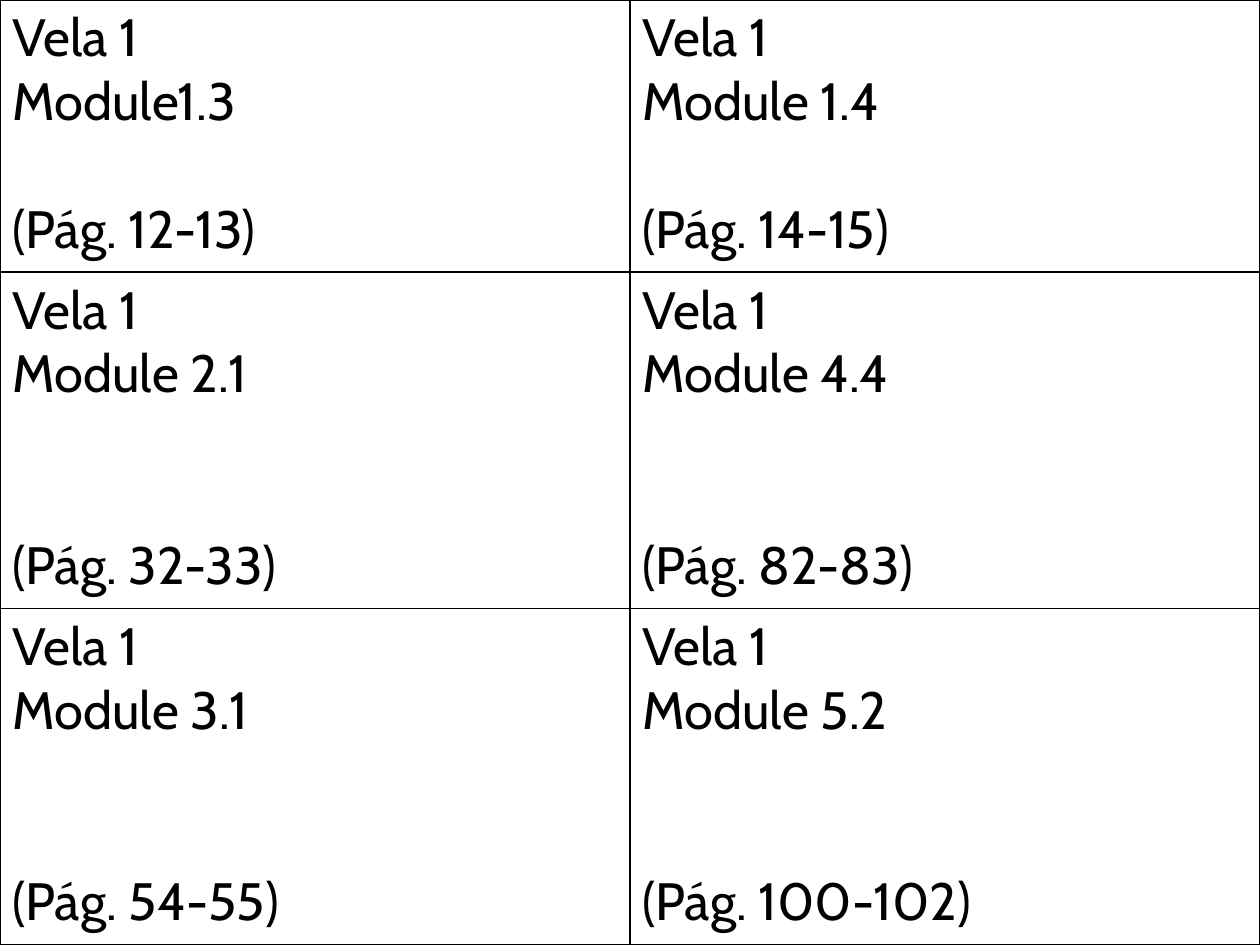
from lxml import etree
from pptx import Presentation
from pptx import util as u
from pptx.dml import color
from pptx.oxml import ns

LINE_PITCH = 36.5
FONT = {"name": "Cabin", "size": u.Pt(30), "bold": False}
ROWS = [
    (2.16, 1, [("Module1.3", "12-13"), ("Module 1.4", "14-15")]),
    (2.67, 2, [("Module 2.1", "32-33"), ("Module 4.4", "82-83")]),
    (2.67, 2, [("Module 3.1", "54-55"), ("Module 5.2", "100-102")]),
]


def rgb(hex_value):
    return color.RGBColor.from_string(hex_value)


def add_borders(cell, hex_value, width):
    properties = cell._tc.get_or_add_tcPr()
    for position, side in enumerate(("lnL", "lnR", "lnT", "lnB")):
        border = etree.Element(ns.qn(f"a:{side}"), w=str(u.Pt(width)))
        fill = etree.SubElement(border, ns.qn("a:solidFill"))
        etree.SubElement(fill, ns.qn("a:srgbClr"), val=hex_value)
        properties.insert(position, border)


def fill_card(cell, module, pages, blank_lines):
    cell.fill.solid()
    cell.fill.fore_color.rgb = rgb("FFFFFF")
    add_borders(cell, "000000", 1)
    cell.text = f"Vela 1\n{module}\n(Pág. {pages})"
    paragraphs = cell.text_frame.paragraphs
    for paragraph in paragraphs:
        font = paragraph.runs[0].font
        for attribute, value in FONT.items():
            setattr(font, attribute, value)
        font.color.rgb = rgb("000000")
    paragraphs[-1].space_before = u.Pt(blank_lines * LINE_PITCH)


def add_module_cards(slide, left, top, width, height):
    cards = slide.shapes.add_table(len(ROWS), 2, left, top, width, height).table
    cards.first_row = cards.horz_banding = False
    for row, (row_height, blank_lines, modules) in enumerate(ROWS):
        cards.rows[row].height = u.Inches(row_height)
        for column, (module, pages) in enumerate(modules):
            fill_card(cards.cell(row, column), module, pages, blank_lines)


def main():
    deck = Presentation()
    deck.slide_width, deck.slide_height = u.Inches(10), u.Inches(7.5)
    slide = deck.slides.add_slide(deck.slide_layouts[6])
    add_module_cards(slide, 0, 0, deck.slide_width, deck.slide_height)
    deck.save("out.pptx")


if __name__ == "__main__":
    main()
